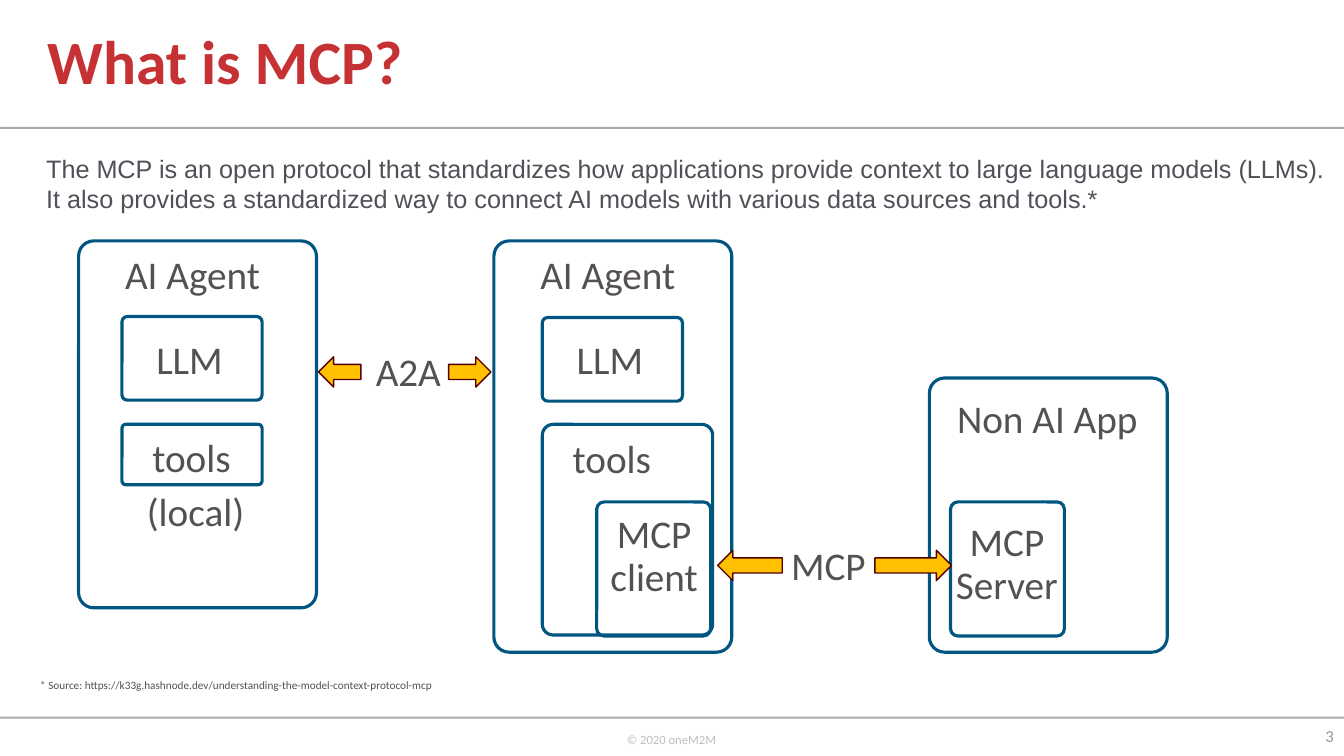
from dataclasses import dataclass

from pptx import Presentation
from pptx import util as u
from pptx.dml.color import RGBColor
from pptx.enum import shapes, text
from pptx.shapes.autoshape import Shape
from pptx.slide import Slide

RED = RGBColor(0xC6, 0x31, 0x33)
BLUE = RGBColor(0x00, 0x55, 0x81)
GOLD = RGBColor(0xFF, 0xC0, 0x00)
MAROON = RGBColor(0x54, 0x00, 0x00)
INK = RGBColor(0x54, 0x50, 0x54)
SLATE = RGBColor(0x4E, 0x51, 0x57)
RULE_GREY = RGBColor(0xA7, 0xA9, 0xAC)
NUMBER_GREY = RGBColor(0x99, 0x98, 0x99)
FOOTER_GREY = RGBColor(0xBF, 0xBF, 0xBF)

# The slide is a grid of square cells, a tenth of an inch wide.
CELL = u.Inches(0.1)
COLS, ROWS = 133.33, 75
LABEL_COLS = 22.6
ARROW_ROWS = 3
CORNER = 0.064


@dataclass(frozen=True)
class Area:
    """A rectangle of the grid, in columns and rows."""
    col: float
    row: float
    cols: float
    rows: float

    def emu(self) -> list[int]:
        return [round(n * CELL) for n in (self.col, self.row, self.cols, self.rows)]


@dataclass(frozen=True)
class Label:
    words: str
    col: float
    row: float
    rows: float = 10


@dataclass(frozen=True)
class Link:
    """A protocol name between an arrow to the left and one to the right."""
    name: str
    row: float
    left_col: float
    left_cols: float
    name_col: float
    name_cols: float
    right_col: float
    right_cols: float


RULES = [Area(0, row, COLS, 0.2) for row in (12.6, 71.1)]

FRAMES = [
    Area(7.8, 23.9, 23.6, 36.4),    # first agent
    Area(12.1, 31.4, 13.9, 8.3),    # its LLM
    Area(12.1, 42.1, 13.9, 6),      # its tools
    Area(49, 23.9, 23.6, 40.8),     # second agent
    Area(53.8, 31.5, 13.9, 8.3),    # its LLM
    Area(53.8, 42.1, 16.9, 20.9),   # its tools
    Area(59.2, 49.8, 11.3, 13.3),   # MCP client
    Area(92.2, 37.5, 23.6, 27.2),   # non AI app
    Area(94.3, 49.8, 11.3, 13.3),   # MCP server
]

LABELS = [
    Label("AI Agent", 7.8, 24.9),
    Label("LLM", 7.5, 33.3),
    Label("tools", 7.7, 43, 6.1),
    Label("(local)", 8.1, 48.4, 6.1),
    Label("AI Agent", 49, 24.9),
    Label("LLM", 49.2, 33.3),
    Label("tools", 49.4, 43.1, 6.1),
    Label("MCP\nclient", 53.6, 50.6),
    Label("Non AI App", 92.6, 39.2, 7.3),
    Label("MCP\nServer", 88.6, 51.4),
]

LINKS = [
    Link("A2A", 35.4, 31.6, 4.2, 36.3, 8.6, 44.5, 4.2),
    Link("MCP", 54.6, 71.2, 6.4, 77.5, 9.5, 86.8, 7.6),
]


def add_text(slide: Slide, words: str, area: Area, *, size: float = 28,
             color: RGBColor = INK, font: str = "Calibri", bold: bool = False,
             align: text.PP_ALIGN = text.PP_ALIGN.LEFT,
             anchor: text.MSO_ANCHOR = text.MSO_ANCHOR.TOP,
             spacing: float = 1.0, wrap: bool = False) -> None:
    tf = slide.shapes.add_textbox(*area.emu()).text_frame
    tf.word_wrap = wrap
    tf.vertical_anchor = anchor
    p = tf.paragraphs[0]
    p.text = words.replace("\n", "\v")
    p.alignment = align
    p.line_spacing = spacing
    for r in p.runs:
        r.font.name = font
        r.font.size = u.Pt(size)
        r.font.bold = bold
        r.font.color.rgb = color


def add_shape(slide: Slide, kind: shapes.MSO_SHAPE, area: Area, *,
              fill: RGBColor | None = None, line: RGBColor | None = None,
              width: float = 1) -> Shape:
    sp = slide.shapes.add_shape(kind, *area.emu())
    sp.shadow.inherit = False
    if fill is None:
        sp.fill.background()
    else:
        sp.fill.solid()
        sp.fill.fore_color.rgb = fill
    if line is None:
        sp.line.fill.background()
    else:
        sp.line.color.rgb = line
        sp.line.width = u.Pt(width)
    return sp


def add_frame(slide: Slide, area: Area) -> None:
    sp = add_shape(slide, shapes.MSO_SHAPE.ROUNDED_RECTANGLE, area,
                   line=BLUE, width=2.25)
    sp.adjustments[0] = CORNER


def add_link(slide: Slide, link: Link) -> None:
    arrows = (
        (shapes.MSO_SHAPE.LEFT_ARROW, link.left_col, link.left_cols),
        (shapes.MSO_SHAPE.RIGHT_ARROW, link.right_col, link.right_cols),
    )
    for kind, col, cols in arrows:
        add_shape(slide, kind, Area(col, link.row, cols, ARROW_ROWS),
                  fill=GOLD, line=MAROON)
    add_text(slide, link.name,
             Area(link.name_col, link.row - 1.4, link.name_cols, 5.7))


def main() -> None:
    prs = Presentation()
    prs.slide_width, prs.slide_height = round(COLS * CELL), ROWS * CELL
    slide = prs.slides.add_slide(prs.slide_layouts[6])

    for rule in RULES:
        add_shape(slide, shapes.MSO_SHAPE.RECTANGLE, rule, fill=RULE_GREY)
    add_text(slide, "What is MCP?", Area(3.7, 0, 85.9, 12.8), size=44, color=RED,
             bold=True, anchor=text.MSO_ANCHOR.MIDDLE, spacing=0.9, wrap=True)
    add_text(slide, "The MCP is an open protocol that standardizes how applications "
             "provide context to large language models (LLMs).\n"
             "It also provides a standardized way to connect AI models with "
             "various data sources and tools.*",
             Area(3.6, 14.7, 130, 7.1), size=18, color=SLATE, font="Arial")

    for frame in FRAMES:
        add_frame(slide, frame)
    for label in LABELS:
        add_text(slide, label.words,
                 Area(label.col, label.row, LABEL_COLS, label.rows),
                 align=text.PP_ALIGN.CENTER, spacing=0.9, wrap=True)
    for link in LINKS:
        add_link(slide, link)

    add_text(slide, "* Source: https://k33g.hashnode.dev/"
             "understanding-the-model-context-protocol-mcp",
             Area(3, 66.8, 41.5, 2.4), size=8)
    add_text(slide, "© 2020 oneM2M", Area(61.2, 72.1, 11.2, 4), size=9,
             color=FOOTER_GREY)
    add_text(slide, "3", Area(127.9, 71, 5.4, 4), size=12, color=NUMBER_GREY,
             align=text.PP_ALIGN.RIGHT, anchor=text.MSO_ANCHOR.MIDDLE, wrap=True)

    prs.save("out.pptx")


if __name__ == "__main__":
    main()
